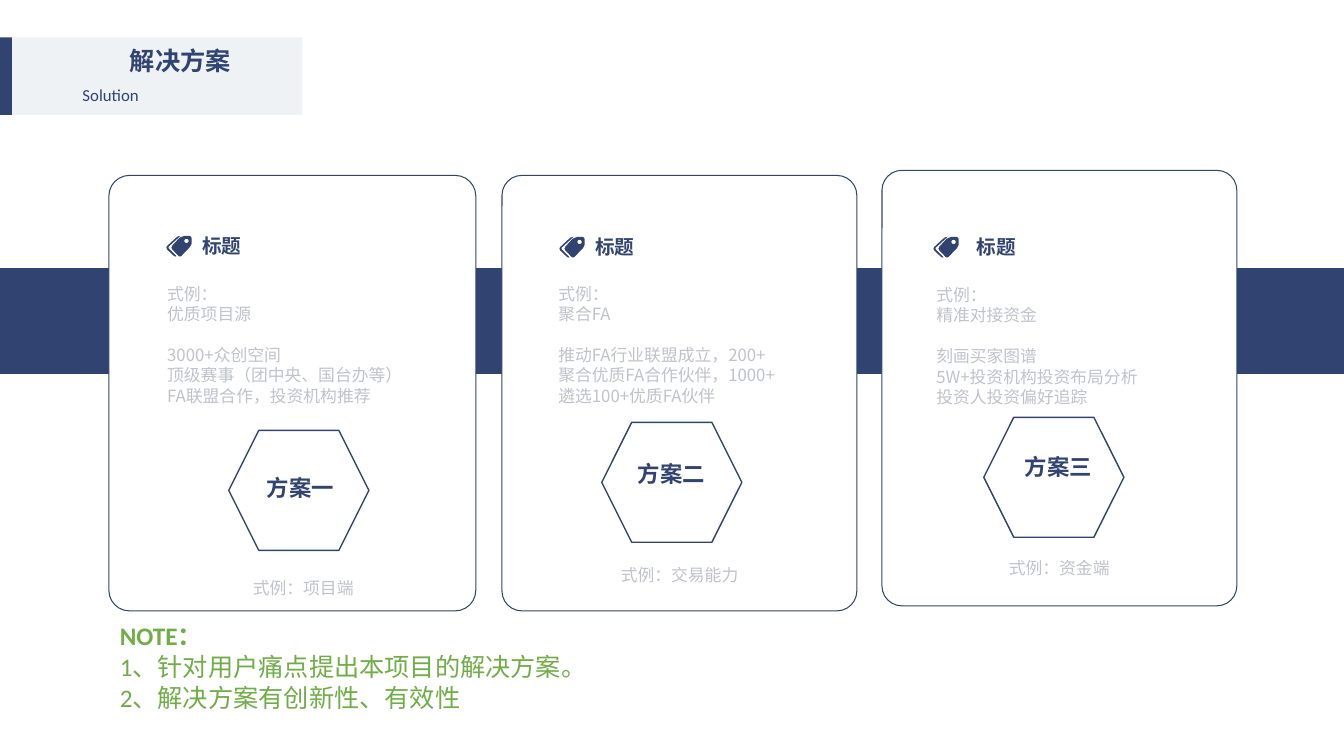
import math
from dataclasses import dataclass

import pptx
import pptx.util
from lxml import etree
from pptx.dml.color import RGBColor
from pptx.enum.shapes import MSO_SHAPE
from pptx.enum.text import PP_ALIGN

NAVY = RGBColor(0x30, 0x43, 0x71)
PALE = RGBColor(0xEE, 0xF2, 0xF5)
WHITE = RGBColor(0xFF, 0xFF, 0xFF)
GREY = RGBColor(0xC0, 0xC2, 0xCC)
GREEN = RGBColor(0x70, 0xAD, 0x47)

LATIN, HAN, HAN_BODY = "Calibri", "Noto Sans CJK SC", "Noto Sans CJK JP"
LINE_HEIGHT = 1.22

WIDTH, HEIGHT = pptx.util.Inches(13.33), pptx.util.Inches(7.5)
COLUMNS, ROWS = 160, 90

# Tag icon outlines in thousandths of an inch
TAG_FRONT = [(230, 0), (180, 0), (150, 10), (130, 20), (60, 95), (50, 118), (60, 135),
             (120, 198), (135, 205), (150, 198), (235, 110), (250, 80), (250, 20), (240, 5)]
TAG_HOLE = [(round(200 + 22 * math.cos(turn * math.pi / 6)),
             round(50 + 22 * math.sin(turn * math.pi / 6))) for turn in range(12)]
TAG_BACK = [(22, 122), (100, 200), (88, 205), (75, 198), (8, 135), (0, 115), (8, 100),
            (95, 20), (115, 5), (140, 0), (22, 108)]


@dataclass
class Card:
    """Positions are (column, row) on the grid."""
    corner: tuple
    width: float
    icon: tuple
    heading: tuple
    body: tuple
    hexagon: tuple
    label: tuple
    caption: tuple
    name: str
    role: str
    lines: list


CARDS = [
    Card((12.96, 20.88), 43.68, (19.8, 28.08), (21.9, 27.24), (18.72, 33.12),
         (27.24, 51.24), (30.6, 55.8), (28.92, 68.16), "方案一", "式例：项目端",
         ["式例：", "优质项目源", "3000+众创空间",
          "顶级赛事（团中央、国台办等）", "FA联盟合作，投资机构推荐"]),
    Card((59.76, 20.88), 42.24, (66.6, 28.2), (68.7, 27.36), (65.28, 33.12),
         (71.64, 50.28), (74.76, 54.12), (72.72, 66.6), "方案二", "式例：交易能力",
         ["式例：", "聚合FA", "推动FA行业联盟成立，200+",
          "聚合优质FA合作伙伴，1000+", "遴选100+优质FA伙伴"]),
    Card((105, 20.28), 42.24, (111.12, 28.2), (114.12, 27.36), (110.28, 33.24),
         (117.12, 49.68), (120.84, 53.28), (118.92, 65.76), "方案三", "式例：资金端",
         ["式例：", "精准对接资金", "刻画买家图谱",
          "5W+投资机构投资布局分析", "投资人投资偏好追踪"]),
]


def across(columns):
    return round(WIDTH * columns / COLUMNS)


def down(rows):
    return round(HEIGHT * rows / ROWS)


def paint(shape, fill=None, line_width=None):
    shape.shadow.inherit = False
    if fill is None:
        shape.fill.background()
    else:
        shape.fill.solid()
        shape.fill.fore_color.rgb = fill
    if line_width is None:
        shape.line.fill.background()
    else:
        shape.line.color.rgb = NAVY
        shape.line.width = pptx.util.Pt(line_width)


def add_shape(page, kind, corner, size, fill=None, line_width=None):
    shape = page.shapes.add_shape(kind, across(corner[0]), down(corner[1]),
                                  across(size[0]), down(size[1]))
    paint(shape, fill, line_width)
    return shape


def add_text(page, corner, size, lines, points, color, latin=HAN, han=HAN,
             bold=False, align=PP_ALIGN.LEFT):
    box = page.shapes.add_textbox(across(corner[0]), down(corner[1]),
                                  across(size[0]), down(size[1]))
    frame = box.text_frame
    frame.word_wrap = True
    frame.text = "\n".join(lines)
    for para in frame.paragraphs:
        para.alignment = align
        para.line_spacing = pptx.util.Pt(round(points * LINE_HEIGHT, 1))
        for span in para.runs:
            span.font.name = latin
            span.font.size = pptx.util.Pt(points)
            span.font.bold = bold
            span.font.color.rgb = color
            east_asian = etree.SubElement(span.font._element, pptx.oxml.ns.qn("a:ea"))
            east_asian.set("typeface", han)
    return frame


def add_tag_icon(page, corner):
    builder = page.shapes.build_freeform(*TAG_FRONT[0], scale=pptx.util.Inches(1) / 1000)
    builder.add_line_segments(TAG_FRONT[1:], close=True)
    for outline in (TAG_HOLE, TAG_BACK):
        builder.move_to(*outline[0])
        builder.add_line_segments(outline[1:], close=True)
    paint(builder.convert_to_shape(across(corner[0]), down(corner[1])), NAVY)


def add_header(page):
    add_shape(page, MSO_SHAPE.RECTANGLE, (0, 4.44), (1.44, 9.24), NAVY)
    add_shape(page, MSO_SHAPE.RECTANGLE, (1.44, 4.44), (34.56, 9.24), PALE)
    add_text(page, (14.28, 4.8), (20, 4.8), ["解决方案"], 18, NAVY, bold=True)
    add_text(page, (8.64, 9.48), (12, 3.6), ["Solution"], 12, NAVY, latin=LATIN)


def add_card(page, card):
    panel = add_shape(page, MSO_SHAPE.ROUNDED_RECTANGLE, card.corner,
                      (card.width, 51.84), WHITE, 0.75)
    panel.adjustments[0] = 0.056
    add_tag_icon(page, card.icon)
    add_text(page, card.heading, (9, 4.08), ["标题"], 14, NAVY,
             latin=LATIN, bold=True, align=PP_ALIGN.CENTER)
    body = add_text(page, card.body, (36.6, 15.72), card.lines, 12, GREY,
                    latin=HAN_BODY, han=HAN_BODY)
    body.paragraphs[2].space_before = pptx.util.Pt(14.6)
    add_shape(page, MSO_SHAPE.HEXAGON, card.hexagon, (16.68, 14.28), line_width=1)
    add_text(page, card.label, (11.16, 4.44), [card.name], 16, NAVY, bold=True)
    add_text(page, card.caption, (18, 3.6), [card.role], 12, GREY,
             latin=HAN_BODY, han=HAN_BODY)


def add_note(page):
    note = add_text(page, (13.08, 73.2), (136.32, 12.12),
                    ["NOTE：", "1、针对用户痛点提出本项目的解决方案。",
                     "2、解决方案有创新性、有效性"], 18, GREEN, latin=LATIN)
    note.paragraphs[0].runs[0].font.bold = True


def main():
    deck = pptx.Presentation()
    deck.slide_width, deck.slide_height = WIDTH, HEIGHT
    page = deck.slides.add_slide(deck.slide_layouts[6])
    add_header(page)
    add_shape(page, MSO_SHAPE.RECTANGLE, (0, 31.92), (COLUMNS, 12.6), NAVY)
    for card in CARDS:
        add_card(page, card)
    add_note(page)
    deck.save("out.pptx")


if __name__ == "__main__":
    main()
